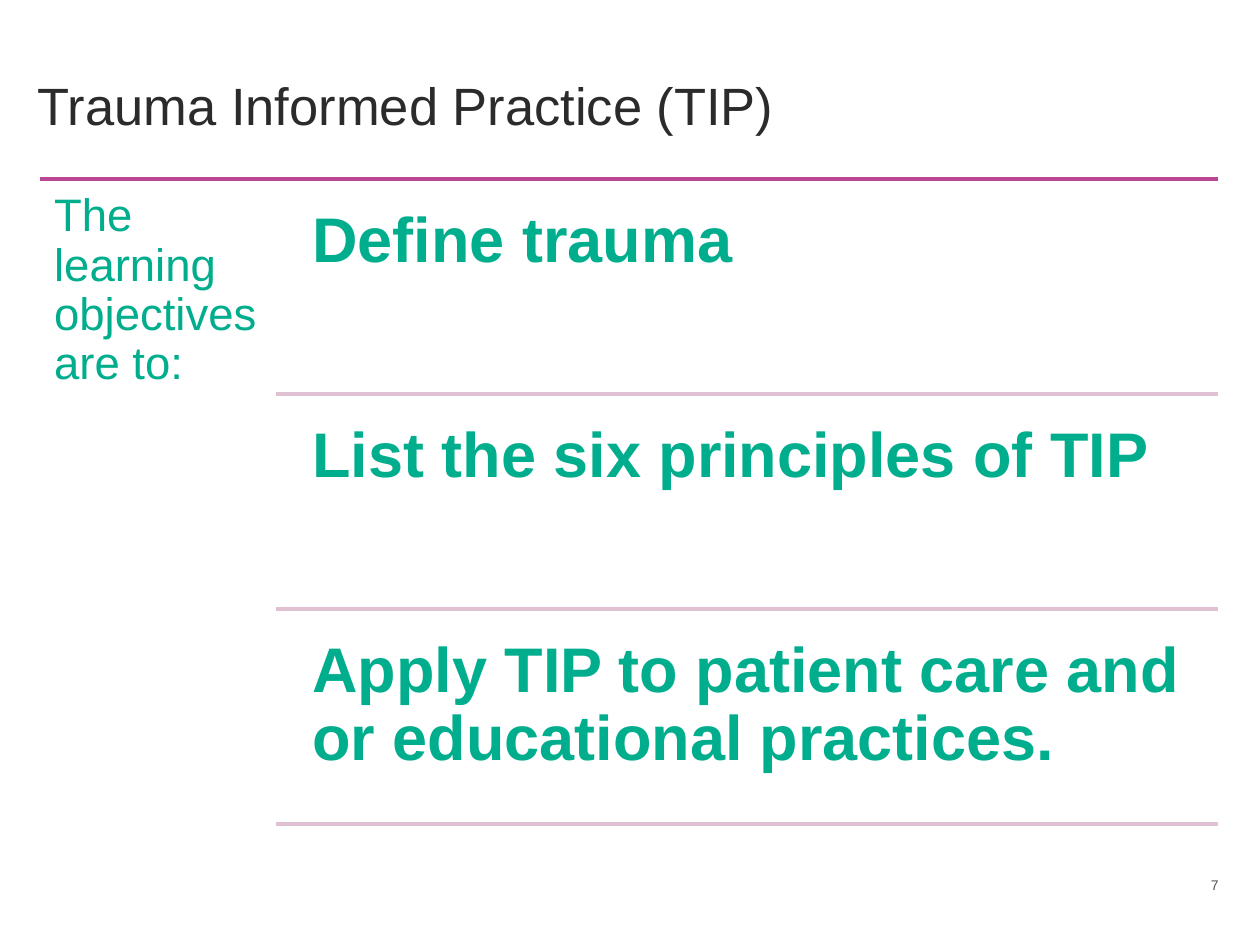
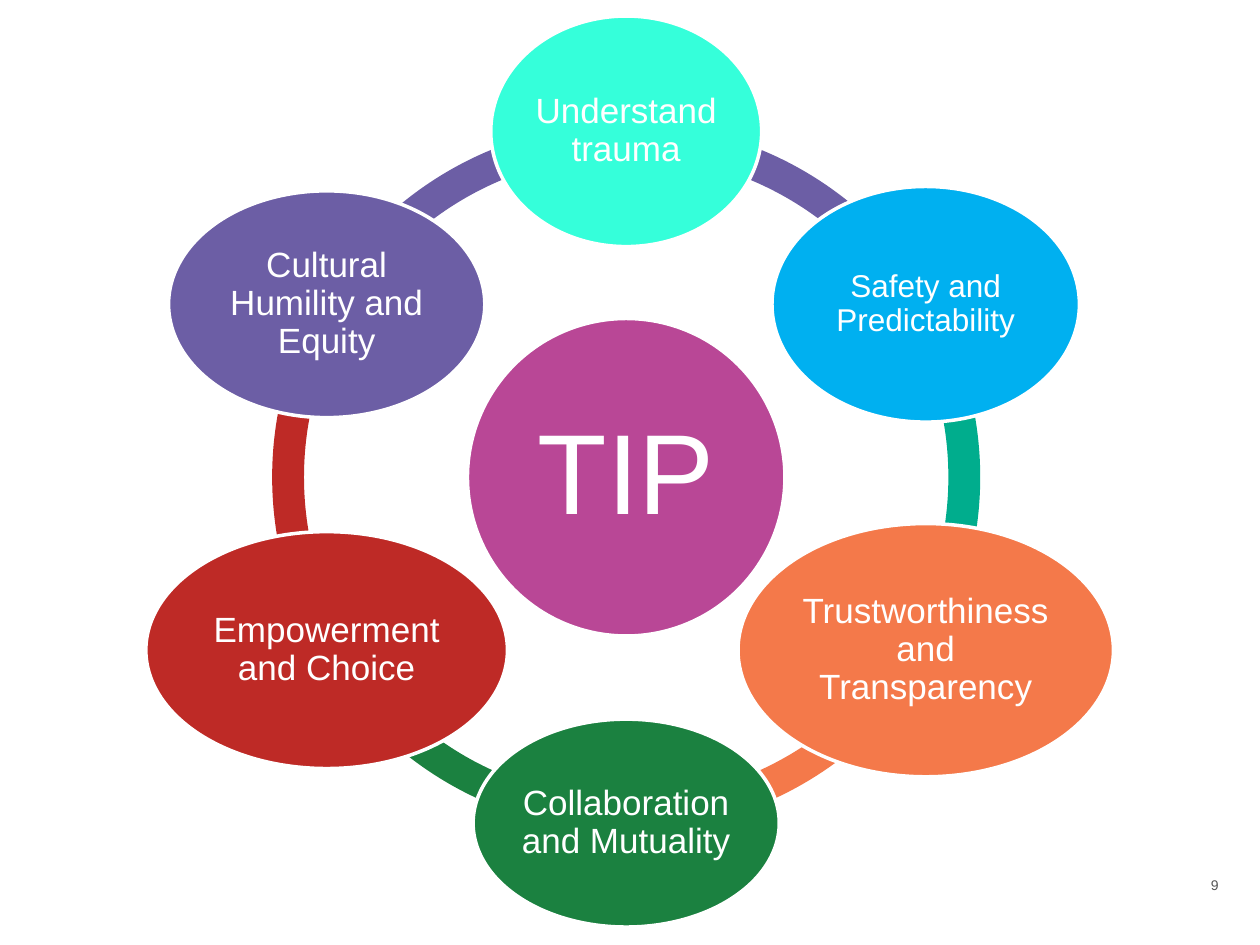
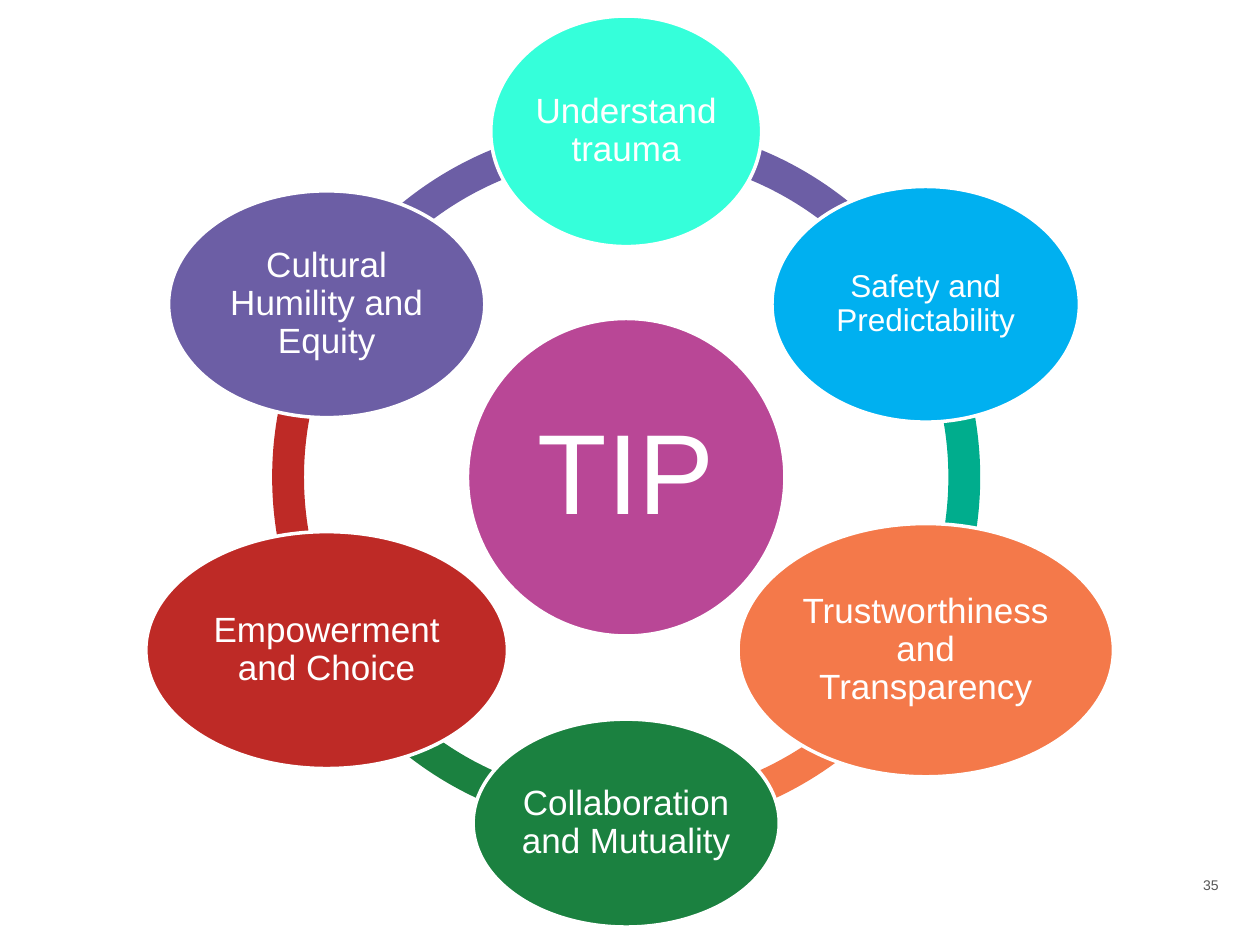
import math
from dataclasses import dataclass

from lxml import etree
from pptx import Presentation
from pptx import util as u
from pptx.dml.color import RGBColor
from pptx.enum import shapes, text
from pptx.oxml.ns import qn


@dataclass(frozen=True)
class Theme:
    font: str = "Arial"
    ink: str = "2B2B2B"
    muted: str = "565656"
    white: str = "FFFFFF"
    magenta: str = "B94796"
    pink: str = "E0C1D3"
    teal: str = "00AD8D"
    aqua: str = "35FFDA"
    blue: str = "00B0F0"
    orange: str = "F4794A"
    green: str = "1B8140"
    red: str = "BE2A26"
    purple: str = "6C5EA5"
    number_size: int = 8
    label_size: int = 20
    small_label_size: int = 18
    intro_size: int = 26
    title_size: int = 30
    objective_size: int = 36
    hub_size: int = 65
    stroke: int = 2
    tight: float = 0.9


THEME = Theme()
WIDTH, HEIGHT = u.Inches(10), u.Inches(7.5)
COL, ROW = WIDTH / 100, HEIGHT / 100

LEFT, RIGHT = 3.2, 96.7
OBJECTIVES_LEFT = 21.9
OBJECTIVES_TOP, OBJECTIVE_PITCH = 18.93, 22.75
OBJECTIVES = (
    "Define trauma",
    "List the six principles of TIP",
    "Apply TIP to patient care and or educational practices.",
)

CENTRE_X, CENTRE_Y = 49.7, 50.5
ORBIT_X, ORBIT_Y = 27.45, 36.6
RING_WIDTH, RING_HEIGHT = 56.2, 74.93
RING_THICKNESS = 0.045
FULL_TURN = 216
PRINCIPLES = (
    ("Understand trauma", THEME.aqua, 21.5, 24.4, THEME.label_size),
    ("Safety and Predictability", THEME.blue, 24.4, 24.93, THEME.small_label_size),
    ("Trustworthiness and Transparency", THEME.orange, 29.8, 26.8, THEME.label_size),
    ("Collaboration and Mutuality", THEME.green, 24.3, 22, THEME.label_size),
    ("Empowerment and Choice", THEME.red, 28.7, 25.07, THEME.label_size),
    ("Cultural Humility and Equity", THEME.purple, 25.1, 24, THEME.label_size),
)
ARC_COLOURS = (THEME.purple, THEME.teal, THEME.orange, THEME.green, THEME.red, THEME.purple)


def place(x, y, w, h):
    return round(x * COL), round(y * ROW), round(w * COL), round(h * ROW)


def write(holder, words, size, colour, bold=False, align=text.PP_ALIGN.LEFT,
          anchor=text.MSO_ANCHOR.TOP, insets=(0.1, 0.05, 0.1, 0.05), spacing=1.0):
    frame = holder.text_frame
    frame.word_wrap = True
    frame.vertical_anchor = anchor
    (frame.margin_left, frame.margin_top,
     frame.margin_right, frame.margin_bottom) = map(u.Inches, insets)
    paragraph = frame.paragraphs[0]
    paragraph.alignment = align
    paragraph.line_spacing = spacing
    run = paragraph.add_run()
    run.text = words
    run.font.name = THEME.font
    run.font.size = u.Pt(size)
    run.font.bold = bold
    run.font.color.rgb = RGBColor.from_string(colour)


def text_block(slide, box, words, size, colour, **style):
    write(slide.shapes.add_textbox(*place(*box)), words, size, colour, **style)


def rule(slide, start, y, colour):
    x1, y1, span, _ = place(start, y, RIGHT - start, 0)
    line = slide.shapes.add_connector(shapes.MSO_CONNECTOR.STRAIGHT, x1, y1, x1 + span, y1)
    line.line.color.rgb = RGBColor.from_string(colour)
    line.line.width = u.Pt(THEME.stroke)
    etree.SubElement(line._element.spPr, qn("a:effectLst"))


def centred_shape(slide, kind, x, y, w, h, fill):
    figure = slide.shapes.add_shape(kind, *place(x - w / 2, y - h / 2, w, h))
    figure.shadow.inherit = False
    figure.fill.solid()
    figure.fill.fore_color.rgb = RGBColor.from_string(fill)
    return figure


def bubble(slide, x, y, w, h, fill, words, size, inset):
    oval = centred_shape(slide, shapes.MSO_SHAPE.OVAL, x, y, w, h, fill)
    oval.line.color.rgb = RGBColor.from_string(THEME.white)
    oval.line.width = u.Pt(THEME.stroke)
    write(oval, words, size, THEME.white, align=text.PP_ALIGN.CENTER,
          anchor=text.MSO_ANCHOR.MIDDLE, insets=(inset,) * 4, spacing=THEME.tight)


def ring(slide):
    sweep = FULL_TURN // len(ARC_COLOURS)
    top = FULL_TURN * 3 // 4
    for step, colour in reversed(list(enumerate(ARC_COLOURS))):
        start = (top + step * sweep) % FULL_TURN
        arc = centred_shape(slide, shapes.MSO_SHAPE.BLOCK_ARC, CENTRE_X, CENTRE_Y,
                            RING_WIDTH, RING_HEIGHT, colour)
        arc.line.fill.background()
        for index, value in enumerate((start, (start + sweep) % FULL_TURN, RING_THICKNESS)):
            arc.adjustments[index] = value


def numbered_slide(deck, number):
    slide = deck.slides.add_slide(deck.slide_layouts[6])
    text_block(slide, (90.7, 90.93, 7, 5.33), str(number), THEME.number_size, THEME.muted,
               align=text.PP_ALIGN.RIGHT, anchor=text.MSO_ANCHOR.MIDDLE)
    return slide


def objectives_slide(deck, number):
    slide = numbered_slide(deck, number)
    text_block(slide, (2.2, 4.4, 94.5, 13.33), "Trauma Informed Practice (TIP)",
               THEME.title_size, THEME.ink, anchor=text.MSO_ANCHOR.MIDDLE, insets=(0.08, 0, 0, 0))
    rule(slide, LEFT, OBJECTIVES_TOP, THEME.magenta)
    text_block(slide, (LEFT, OBJECTIVES_TOP, OBJECTIVES_LEFT - LEFT, 69.47),
               "The learning objectives are to:", THEME.intro_size, THEME.teal,
               insets=(0.11,) * 4, spacing=THEME.tight)
    for index, objective in enumerate(OBJECTIVES):
        top = OBJECTIVES_TOP + index * OBJECTIVE_PITCH
        text_block(slide, (23.3, top + 1.07, 73.4, 21.73), objective, THEME.objective_size,
                   THEME.teal, bold=True, insets=(0.15,) * 4, spacing=THEME.tight)
        rule(slide, OBJECTIVES_LEFT, top + OBJECTIVE_PITCH, THEME.pink)


def principles_slide(deck, number):
    slide = numbered_slide(deck, number)
    ring(slide)
    bubble(slide, CENTRE_X, CENTRE_Y, 25.2, 33.6, THEME.magenta, "TIP", THEME.hub_size, 0.09)
    for index, (principle, fill, w, h, size) in enumerate(PRINCIPLES):
        angle = math.tau * index / len(PRINCIPLES)
        bubble(slide, CENTRE_X + ORBIT_X * math.sin(angle), CENTRE_Y - ORBIT_Y * math.cos(angle),
               w, h, fill, principle, size, 0.03)


def main():
    deck = Presentation()
    deck.slide_width, deck.slide_height = WIDTH, HEIGHT
    objectives_slide(deck, 7)
    for number in (9, 35):
        principles_slide(deck, number)
    deck.save("out.pptx")


if __name__ == "__main__":
    main()
